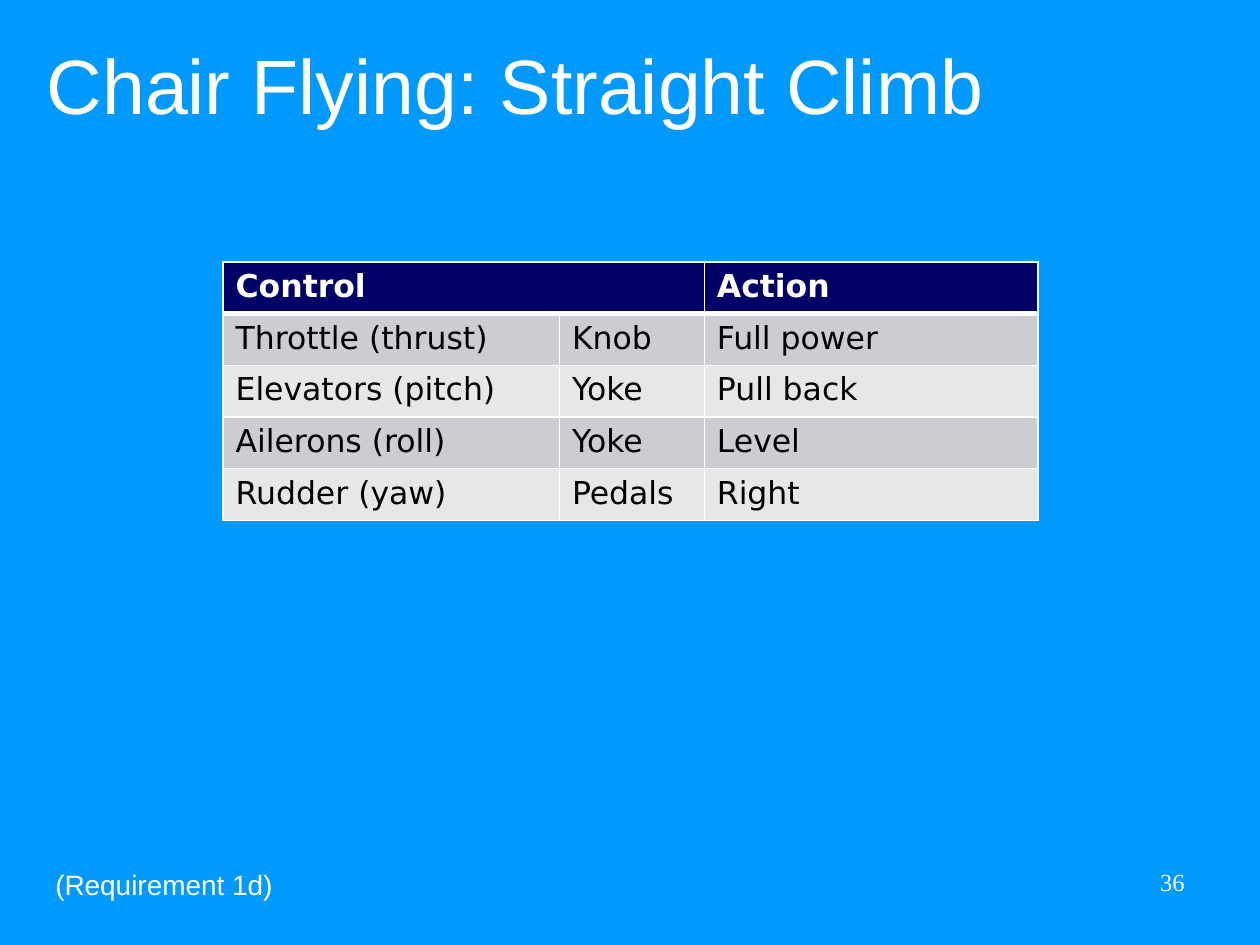
"""Build the 'Chair Flying: Straight Climb' slide with its table of controls and actions."""
import pptx
import pptx.dml.color
import pptx.enum.text
import pptx.oxml
import pptx.oxml.ns
import pptx.util

Inches, Pt = pptx.util.Inches, pptx.util.Pt
PP_ALIGN, MSO_ANCHOR = pptx.enum.text.PP_ALIGN, pptx.enum.text.MSO_ANCHOR
WHITE = "FFFFFF"


def paint(target, color):
    target.rgb = pptx.dml.color.RGBColor.from_string(color)


def write(tf, text, color, align=PP_ALIGN.LEFT, **fmt):
    p = tf.paragraphs[0]
    p.alignment = align
    r = p.add_run()
    r.text = text
    for name, value in fmt.items():
        setattr(r.font, name, value)
    paint(r.font.color, color)


prs = pptx.Presentation()
prs.slide_width, prs.slide_height = Inches(10), Inches(7.5)
s = prs.slides.add_slide(prs.slide_layouts[5])
s.background.fill.solid()
paint(s.background.fill.fore_color, "0099FF")

title = s.shapes.title
box = {"left": 0.27, "top": 0.13, "width": 9.45, "height": 0.95}
for name, value in box.items():
    setattr(title, name, Inches(value))
title.text_frame.vertical_anchor = MSO_ANCHOR.BOTTOM
write(title.text_frame, "Chair Flying: Straight Climb", WHITE, size=Pt(44), name="Arial")

labels = [
    ("36", (7.17, 6.83, 2.33, 0.52), True, MSO_ANCHOR.TOP, PP_ALIGN.RIGHT, 14, "Times New Roman"),
    ("(Requirement 1d)", (0.34, 6.83, 1.95, 0.37), False, MSO_ANCHOR.MIDDLE, PP_ALIGN.LEFT, 16, "Arial"),
]
for text, place, wrap, anchor, align, size, font in labels:
    tf = s.shapes.add_textbox(*map(Inches, place)).text_frame
    tf.word_wrap, tf.vertical_anchor = wrap, anchor
    write(tf, text, WHITE, align, size=Pt(size), name=font)

rows = [
    ("Control", "", "Action"),
    ("Throttle (thrust)", "Knob", "Full power"),
    ("Elevators (pitch)", "Yoke", "Pull back"),
    ("Ailerons (roll)", "Yoke", "Level"),
    ("Rudder (yaw)", "Pedals", "Right"),
]
widths = [2.67, 1.15, 2.65]
row_height = 0.41
table = s.shapes.add_table(len(rows), len(widths), Inches(1.77), Inches(2.08),
                           Inches(sum(widths)), Inches(row_height * len(rows))).table
for column, width in zip(table.columns, widths):
    column.width = Inches(width)
for row in table.rows:
    row.height = Inches(row_height)
table.cell(0, 0).merge(table.cell(0, 1))

for i, values in enumerate(rows):
    header = i == 0
    fill = "000066" if header else ("E7E7EA", "CCCCD3")[i % 2]
    for j, text in enumerate(values):
        cell = table.cell(i, j)
        tcPr = cell._tc.get_or_add_tcPr()
        for side in "LRTB":
            thick = (i, side) in [(0, "B"), (1, "T")]
            tcPr.append(pptx.oxml.parse_xml(
                f'<a:ln{side} {pptx.oxml.ns.nsdecls("a")} w="{Pt(3 if thick else 1)}">'
                f'<a:solidFill><a:srgbClr val="{WHITE}"/></a:solidFill></a:ln{side}>'))
        cell.fill.solid()
        paint(cell.fill.fore_color, fill)
        if text:
            write(cell.text_frame, text, WHITE if header else "000000",
                  size=Pt(18), name="DejaVu Sans", bold=header)

prs.save("out.pptx")
